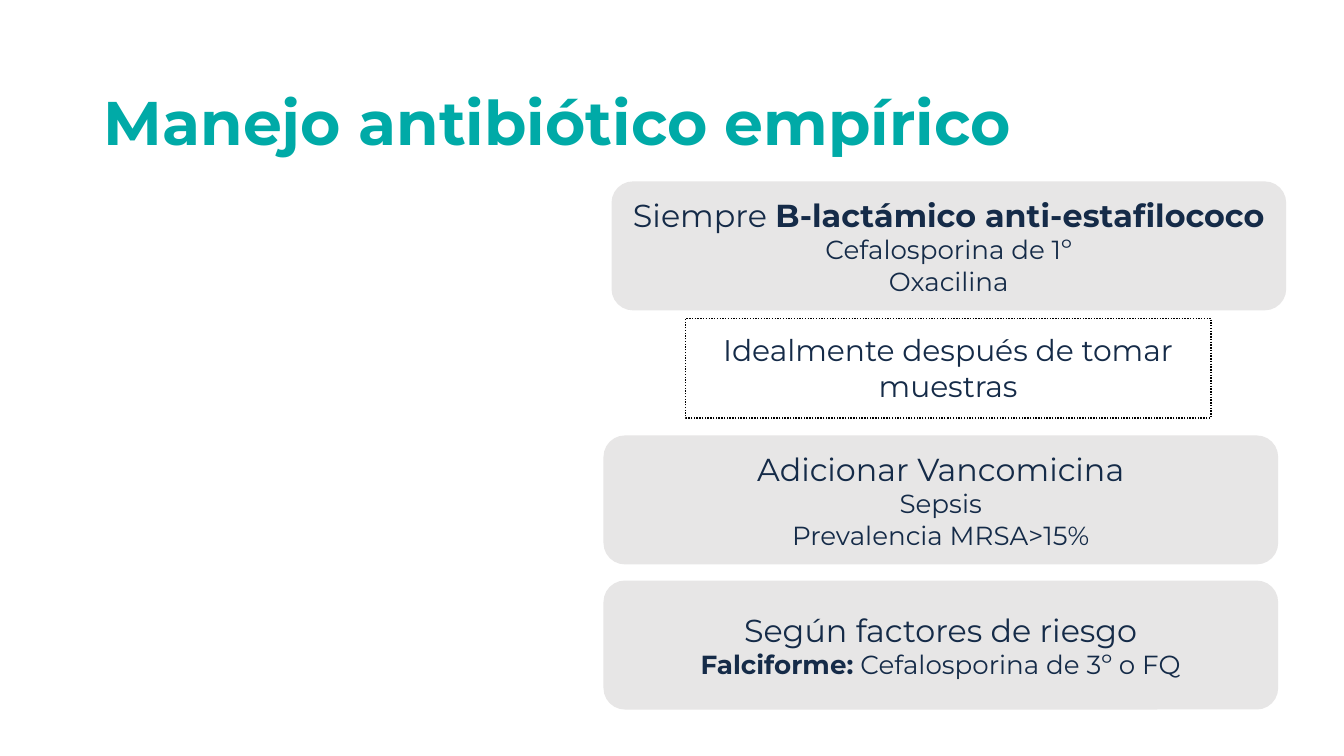
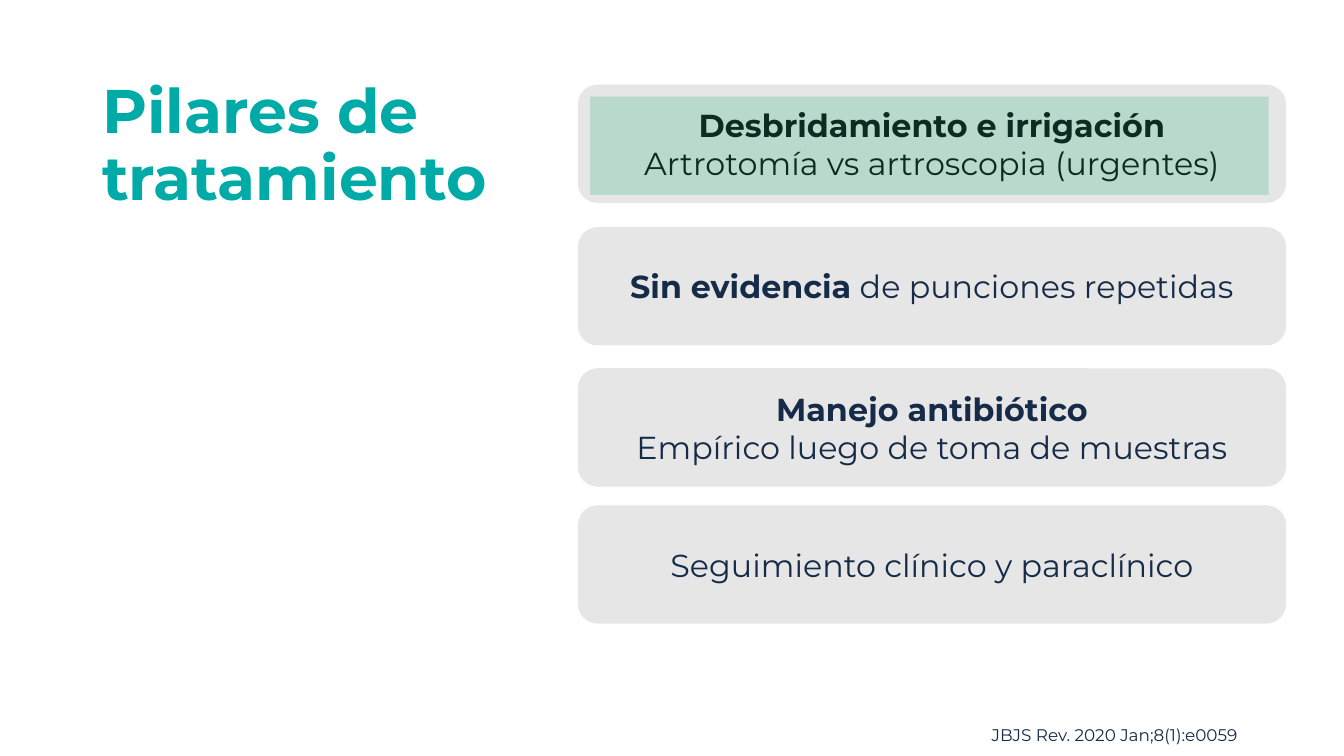
from pptx import Presentation
from pptx.dml.color import RGBColor as RGB
from pptx.enum.dml import MSO_LINE as Dash
from pptx.enum.shapes import MSO_SHAPE as Shape
from pptx.enum.text import MSO_ANCHOR as Anchor, PP_ALIGN as Align
from pptx.oxml.ns import qn
from pptx.util import Inches, Pt
from lxml import etree

# Shared look
WIDE = 10
HIGH = WIDE * 9 / 16
FONT = "Montserrat"
HUE = {"title": "00AAA7", "text": "152B48", "card": "E7E6E6",
       "black": "000000", "mark": "36B386"}
BIG, MID, SMALL = 17, 14, 9
PAD = (0.1, 0.1)

# Content: lines are (size, text), and *stars* enclose bold words
DRUGS = {
    "title": ["Manejo antibiótico empírico"],
    "at": (0.7, 0.39, 7.61, 1.09),
    "size": (5.02, 0.96),
    "cards": [
        (4.55, 1.35, "text", [(BIG, "Siempre *B-lactámico anti-estafilococo*"),
                              (MID, "Cefalosporina de 1º"),
                              (MID, "Oxacilina")]),
        (4.49, 3.24, "text", [(BIG, "Adicionar Vancomicina"),
                              (MID, "Sepsis"),
                              (MID, "Prevalencia MRSA>15%")]),
        (4.49, 4.32, "text", [(BIG, "Según factores de riesgo"),
                              (MID, "*Falciforme:* Cefalosporina de 3º o FQ")]),
    ],
}
NOTE = [(16, "Idealmente después de tomar muestras")]

CARE = {
    "title": ["Pilares de", "tratamiento"],
    "at": (0.69, 0.55, 8.62, 1.09),
    "size": (5.27, 0.88),
    "cards": [
        (4.3, 0.63, "black", [(BIG, "*Desbridamiento e irrigación*"),
                              (BIG, "Artrotomía vs artroscopia (urgentes)")]),
        (4.3, 1.69, "text", [(BIG, "*Sin evidencia* de punciones repetidas")]),
        (4.3, 2.74, "text", [(BIG, "*Manejo antibiótico*"),
                             (BIG, "Empírico luego de toma de muestras")]),
        (4.3, 3.76, "text", [(BIG, "Seguimiento clínico y paraclínico")]),
    ],
}
CITE = [(SMALL, "JBJS Rev. 2020 Jan;8(1):e0059")]


def tint(name):
    return RGB.from_string(HUE[name])


def write(shape, lines, hue="text", align=Align.CENTER, anchor=Anchor.MIDDLE,
          pad=PAD, space=None):
    frame = shape.text_frame
    frame.word_wrap = True
    frame.vertical_anchor = anchor
    frame.margin_left = frame.margin_right = Inches(pad[0])
    frame.margin_top = frame.margin_bottom = Inches(pad[1])
    for n, (size, text) in enumerate(lines):
        para = frame.paragraphs[0] if n == 0 else frame.add_paragraph()
        para.alignment = align
        if space:
            para.line_spacing = space
        font = para.font
        font.name, font.size = FONT, Pt(size)
        font.color.rgb = tint(hue)
        parts = [(part, k % 2 == 1)
                 for k, part in enumerate(text.split("*")) if part]
        font.bold = all(bold for _, bold in parts)
        for part, bold in parts:
            run = para.add_run()
            run.text = part
            if bold != font.bold:
                run.font.bold = bold


def block(slide, kind, at, fill=None):
    shape = slide.shapes.add_shape(kind, *map(Inches, at))
    shape.shadow.inherit = False
    shape.line.fill.background()
    if fill:
        shape.fill.solid()
        shape.fill.fore_color.rgb = tint(fill)
    else:
        shape.fill.background()
    return shape


def label(slide, at, lines, **style):
    box = slide.shapes.add_textbox(*map(Inches, at))
    write(box, lines, align=Align.LEFT, **style)


def build(deck, page):
    slide = deck.slides.add_slide(deck.slide_layouts[6])
    title = [(33, f"*{text}*") for text in page["title"]]
    label(slide, page["at"], title, hue="title", pad=(0.07, 0.04), space=0.9)
    for left, top, hue, lines in page["cards"]:
        card = block(slide, Shape.ROUNDED_RECTANGLE,
                     (left, top, *page["size"]), "card")
        write(card, lines, hue)
    return slide


def main():
    deck = Presentation()
    deck.slide_width, deck.slide_height = Inches(WIDE), Inches(HIGH)

    # Antibiotics, with a dotted reminder between the cards
    slide = build(deck, DRUGS)
    note = block(slide, Shape.RECTANGLE, (5.1, 2.37, 3.91, 0.74))
    note.line.color.rgb = tint("black")
    note.line.width = Pt(0.75)
    note.line.dash_style = Dash.ROUND_DOT
    write(note, NOTE, anchor=Anchor.TOP)

    # Pillars, with a see-through mark on the first card and the citation
    slide = build(deck, CARE)
    mark = block(slide, Shape.RECTANGLE, (4.39, 0.72, 5.05, 0.73), "mark")
    color = mark.fill._xPr.find(qn("a:solidFill"))[0]
    etree.SubElement(color, qn("a:alpha"), val="25000")
    label(slide, (7.28, 5.28, 2.72, 0.36), CITE, anchor=Anchor.TOP, space=1.15)

    deck.save("out.pptx")


if __name__ == "__main__":
    main()
